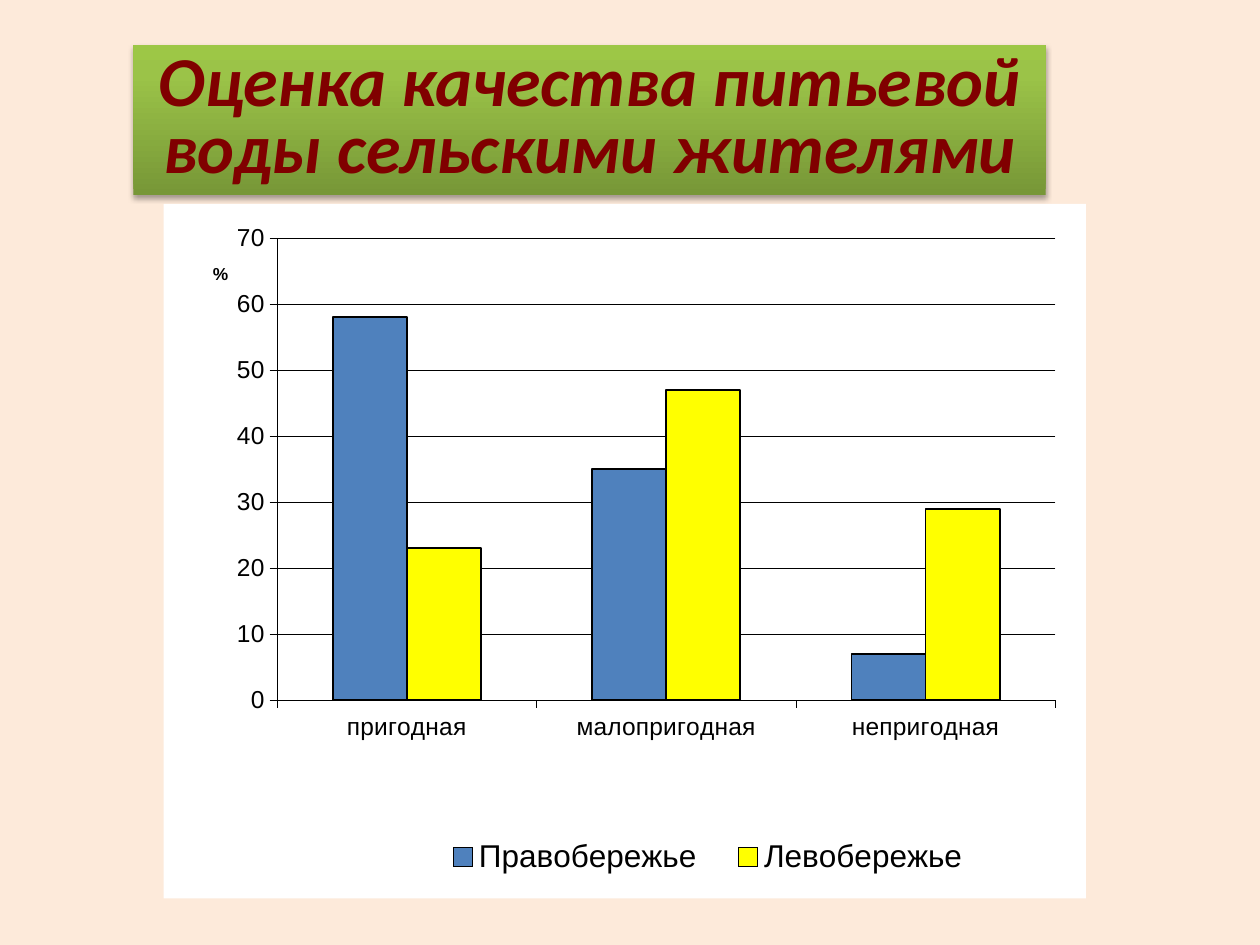
from lxml.etree import SubElement
from pptx import Presentation
from pptx.chart.data import CategoryChartData
from pptx.dml.color import RGBColor
from pptx.enum.chart import XL_CHART_TYPE as ChartType, XL_LEGEND_POSITION as LegendPosition
from pptx.enum.chart import XL_TICK_LABEL_POSITION as LabelPosition, XL_TICK_MARK as TickMark
from pptx.enum.shapes import MSO_SHAPE as Shape
from pptx.enum.text import MSO_ANCHOR as Anchor, PP_ALIGN as Align
from pptx.oxml import parse_xml
from pptx.oxml.ns import nsdecls, qn
from pptx.util import Cm, Pt

TITLE = "Оценка качества питьевой воды сельскими жителями"
CATEGORIES = ["пригодная", "малопригодная", "непригодная"]
SERIES = [
    ("Правобережье", (58, 35, 7), "4F81BD"),
    ("Левобережье", (23, 47, 29), "FFFF00"),
]
BACKGROUND, BLACK = "FDEADA", "000000"
TITLE_BOX = (2.69, 0.91, 18.39, 3.02)
CHART_BOX = (3.3, 4.11, 18.59, 14)
GRADIENT = [(0, "779737"), (80, "9BC348"), (100, "9DC746")]
PLOT_AREA = {"layoutTarget": "inner", "xMode": "edge", "yMode": "edge",
             "x": 0.123, "y": 0.049, "w": 0.844, "h": 0.666}
PERCENT_PLACE = {"xMode": "edge", "yMode": "edge", "x": 0.05, "y": 0.08}
LEGEND_PLACE = {"xMode": "edge", "yMode": "edge", "x": 0.28, "y": 0.9, "w": 0.62, "h": 0.08}


def color(value):
    return RGBColor.from_string(value)


def style(target, **values):
    for name, value in values.items():
        setattr(target, name, value)


def style_font(font, size, shade=BLACK, **values):
    style(font, size=Pt(size), **values)
    font.color.rgb = color(shade)


def style_line(line, width):
    line.color.rgb = color(BLACK)
    line.width = Pt(width)


def fill_solid(fill, shade):
    fill.solid()
    fill.fore_color.rgb = color(shade)


def place(element, index, values):
    for old in element.findall(qn("c:layout")):
        element.remove(old)
    layout = parse_xml(f"<c:layout {nsdecls('c')}/>")
    manual = SubElement(layout, qn("c:manualLayout"))
    for name, value in values.items():
        SubElement(manual, qn(f"c:{name}")).set("val", str(value))
    element.insert(index, layout)


def add_title(page):
    box = page.shapes.add_shape(Shape.RECTANGLE, *map(Cm, TITLE_BOX))
    box.line.fill.background()
    stops = "".join(f'<a:gs pos="{stop * 1000}"><a:srgbClr val="{shade}"/></a:gs>'
                    for stop, shade in GRADIENT)
    properties = box.fill._xPr
    properties.find(qn("a:prstGeom")).addnext(parse_xml(
        f'<a:gradFill {nsdecls("a")} rotWithShape="1"><a:gsLst>{stops}</a:gsLst>'
        '<a:lin ang="16200000" scaled="0"/></a:gradFill>'))
    properties.append(parse_xml(
        f'<a:effectLst {nsdecls("a")}><a:outerShdw blurRad="{Pt(3.1)}" dist="{Pt(1.8)}" '
        'dir="5400000" rotWithShape="0"><a:srgbClr val="000000"><a:alpha val="35000"/>'
        '</a:srgbClr></a:outerShdw></a:effectLst>'))
    style(box.text_frame, word_wrap=True, vertical_anchor=Anchor.MIDDLE)
    para = box.text_frame.paragraphs[0]
    style(para, alignment=Align.CENTER, line_spacing=0.8, space_after=Pt(1))
    span = para.add_run()
    span.text = TITLE
    style_font(span.font, 40, "800000", name="Calibri", bold=True, italic=True)


def add_chart(page):
    data = CategoryChartData()
    data.categories = CATEGORIES
    for name, values, _ in SERIES:
        data.add_series(name, values)
    chart = page.shapes.add_chart(ChartType.COLUMN_CLUSTERED, *map(Cm, CHART_BOX), data).chart
    style(chart, has_title=False, has_legend=True)
    style_font(chart.font, 9.9, name="Arial")
    space = chart._chartSpace
    space.find(qn("c:chart")).addnext(parse_xml(
        f'<c:spPr {nsdecls("c", "a")}><a:solidFill><a:srgbClr val="FFFFFF"/></a:solidFill>'
        '<a:ln><a:noFill/></a:ln></c:spPr>'))
    place(space.find(".//" + qn("c:plotArea")), 0, PLOT_AREA)

    plot = chart.plots[0]
    style(plot, gap_width=150, overlap=0, vary_by_categories=False)
    for series, (_, _, shade) in zip(plot.series, SERIES):
        fill_solid(series.format.fill, shade)
        style_line(series.format.line, 1)

    for axis in (chart.category_axis, chart.value_axis):
        style(axis, major_tick_mark=TickMark.OUTSIDE, minor_tick_mark=TickMark.NONE)
        style_font(axis.tick_labels.font, 14, name="Arial")
        style_line(axis.format.line, 0.25)
    chart.category_axis.tick_label_position = LabelPosition.LOW
    scale = chart.value_axis
    style(scale, minimum_scale=0, maximum_scale=70, major_unit=10, has_major_gridlines=True)
    style_line(scale.major_gridlines.format.line, 0.25)

    frame = scale.axis_title.text_frame
    frame.text = "%"
    style_font(frame.paragraphs[0].runs[0].font, 9.9, name="Arial", bold=True)
    title = scale.axis_title._element
    style_rotation = title.find(".//" + qn("a:bodyPr"))
    style_rotation.set("rot", "0")
    style_rotation.set("vert", "horz")
    place(title, 1, PERCENT_PLACE)

    style(chart.legend, position=LegendPosition.BOTTOM, include_in_layout=False)
    style_font(chart.legend.font, 18, name="Arial")
    place(chart.legend._element, 1, LEGEND_PLACE)


def main():
    deck = Presentation()
    style(deck, slide_width=Cm(25.4), slide_height=Cm(19.05))
    page = deck.slides.add_slide(deck.slide_layouts[6])
    fill_solid(page.background.fill, BACKGROUND)
    add_chart(page)
    add_title(page)
    deck.save("out.pptx")


if __name__ == "__main__":
    main()
